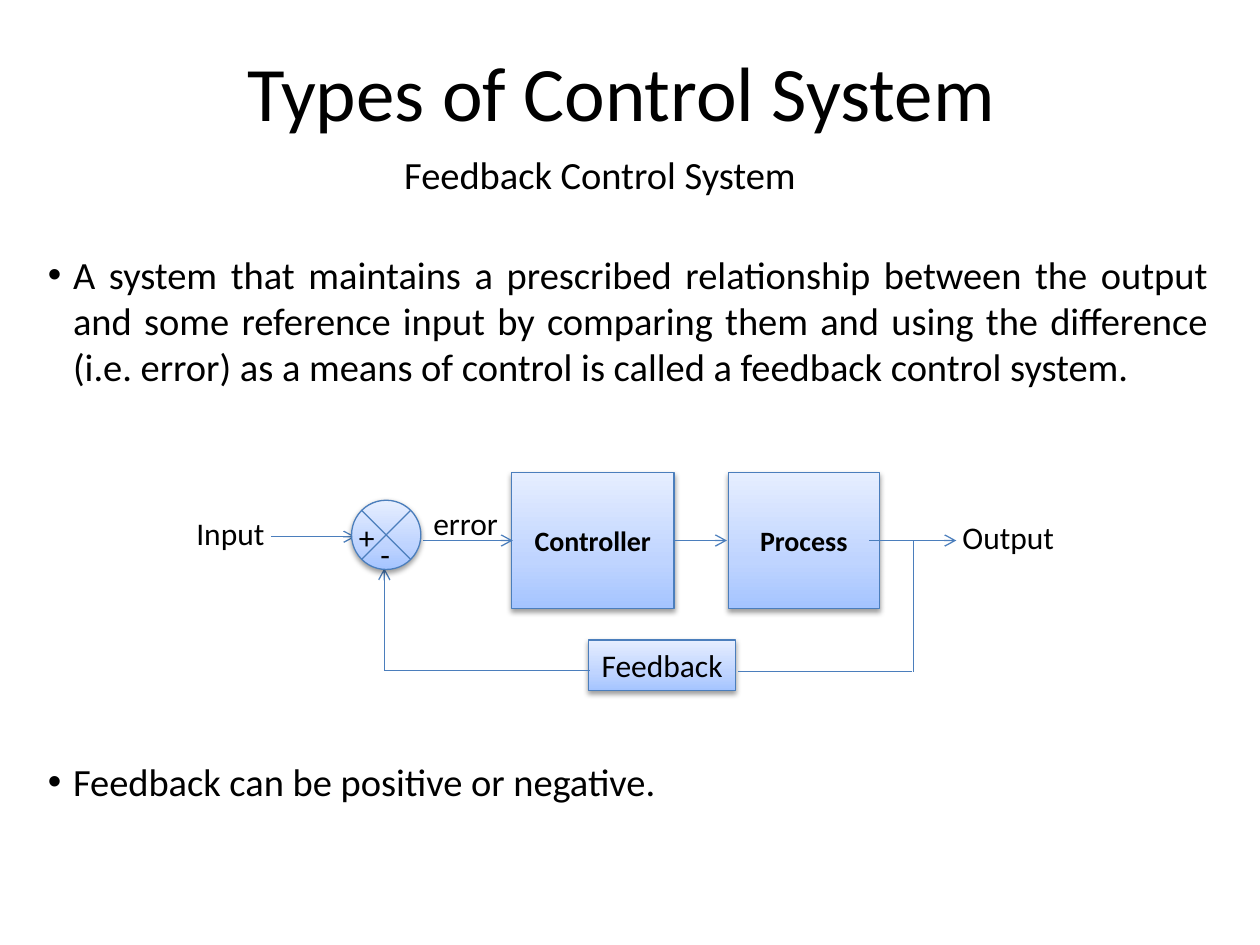
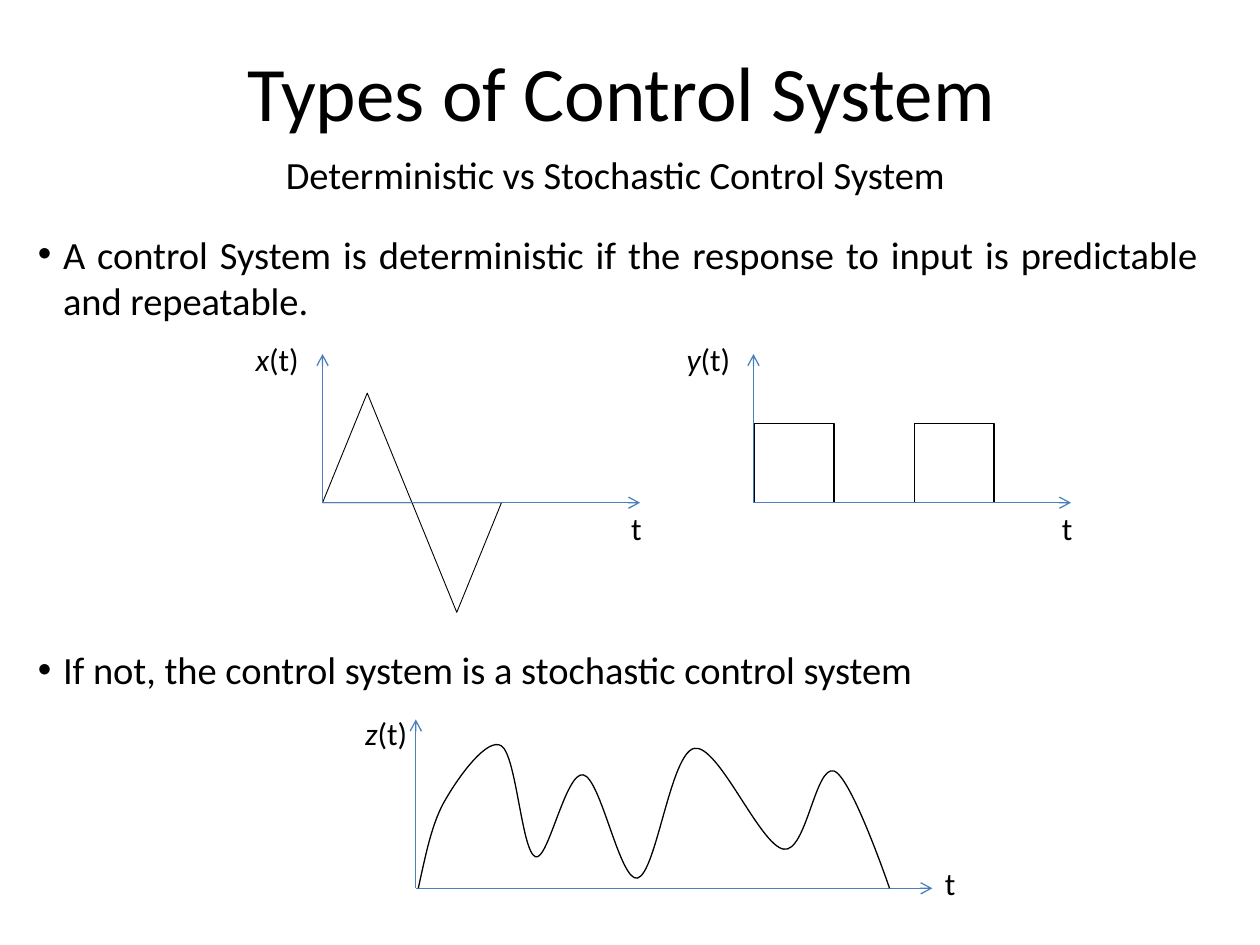
from copy import deepcopy
from dataclasses import dataclass

from lxml import etree
from pptx import Presentation, slide as sl, util as u
from pptx.dml import color
from pptx.enum import shapes as kinds, text as t
from pptx.oxml import ns
from pptx.shapes import autoshape, connector as links
from pptx.text import text as tx

COLORS = {"ink": "000000", "line": "4B7EBC", "deep": "A4C4FF", "mid": "BFD4FF", "pale": "E6EEFF"}
BLOCK_STOPS = [(0, "deep"), (0.35, "mid"), (1, "pale")]
FONT = "Calibri"
TITLE = "Types of Control System "
SHAPE = kinds.MSO_SHAPE
LABEL_HEIGHT = 0.4


@dataclass
class Area:
    left: float
    top: float
    width: float
    height: float

    def lengths(self) -> list[u.Length]:
        return [u.Inches(side) for side in (self.left, self.top, self.width, self.height)]


@dataclass
class Topic:
    heading: str
    heading_area: Area
    bullets: list[str]
    body_area: Area
    diagram_gap: float


@dataclass
class Label:
    text: str
    area: Area


@dataclass
class Block:
    text: str
    area: Area
    kind: SHAPE = SHAPE.RECTANGLE


@dataclass
class Link:
    start: tuple[float, float]
    end: tuple[float, float]
    arrow: bool = True


@dataclass
class Axes:
    variable: str
    origin: tuple[float, float]
    across: float
    up: float
    name_offset: tuple[float, float]
    time_offset: tuple[float, float]


FEEDBACK = Topic(
    "Feedback Control System",
    Area(3.11, 1.15, 3.35, 0.47),
    [
        "A system that maintains a prescribed relationship between the output and some reference "
        "input by comparing them and using the difference (i.e. error) as a means of control is "
        "called a feedback control system.",
        "Feedback can be positive or negative.",
    ],
    Area(0.28, 1.94, 9.41, 4.54),
    210.5,
)
STOCHASTIC = Topic(
    "Deterministic vs Stochastic Control System",
    Area(2.17, 1.15, 5.5, 0.47),
    [
        "A control System is deterministic if the response to input is predictable and repeatable.",
        "If not, the control system is a stochastic control system",
    ],
    Area(0.2, 1.78, 9.41, 3.8),
    184.5,
)

BLOCKS = [
    Block("Controller", Area(4.06, 3.75, 1.29, 1.08)),
    Block("Process", Area(5.78, 3.75, 1.2, 1.08)),
]
FEEDBACK_BLOCK = Block("Feedback", Area(4.67, 5.08, 1.17, 0.4))
JUNCTION = Block("", Area(2.79, 3.97, 0.55, 0.55), SHAPE.FLOWCHART_SUMMING_JUNCTION)
LINKS = [
    Link((2.15, 4.26), (2.82, 4.26)),
    Link((3.36, 4.29), (4.07, 4.29)),
    Link((5.34, 4.29), (5.77, 4.29)),
    Link((6.9, 4.29), (7.59, 4.29)),
    Link((7.25, 4.29), (7.25, 5.33), False),
    Link((7.24, 5.33), (5.86, 5.33), False),
    Link((3.05, 5.32), (4.68, 5.32), False),
    Link((3.05, 5.32), (3.05, 4.51)),
]
LABELS = [
    Label("Input", Area(1.46, 4.03, 0.82, 0.46)),
    Label("Output", Area(7.54, 4.06, 1.02, 0.46)),
    Label("-", Area(2.92, 4.2, 0.28, LABEL_HEIGHT)),
    Label("+", Area(2.75, 4.06, 0.33, LABEL_HEIGHT)),
    Label("error", Area(3.34, 3.95, 0.72, LABEL_HEIGHT)),
]

X_AXES = Axes("x", (2.56, 3.99), 2.52, 1.18, (-0.63, -1.34), (2.35, 0))
Y_AXES = Axes("y", (5.98, 3.99), 2.52, 1.18, (-0.63, -1.34), (2.35, 0))
Z_AXES = Axes("z", (3.3, 7.05), 4.1, 1.34, (-0.5, -1.43), (4.1, -0.24))

NOISE_START = (3.32, 7.05)
NOISE_CURVES = [
    ((3.38, 6.78), (3.43, 6.52), (3.54, 6.34)),
    ((3.65, 6.15), (3.87, 5.85), (3.98, 5.92)),
    ((4.1, 6), (4.14, 6.76), (4.25, 6.8)),
    ((4.35, 6.84), (4.49, 6.12), (4.63, 6.15)),
    ((4.77, 6.18), (4.92, 7), (5.06, 6.97)),
    ((5.21, 6.93), (5.32, 5.98), (5.51, 5.94)),
    ((5.7, 5.9), (6.03, 6.71), (6.22, 6.74)),
    ((6.4, 6.77), (6.47, 6.07), (6.62, 6.12)),
    ((6.76, 6.17), (7.06, 7.05), (7.06, 7.05)),
]


def rgb(name: str) -> color.RGBColor:
    return color.RGBColor.from_string(COLORS[name])


def format_runs(para: tx._Paragraph, size: float, bold: bool = False) -> None:
    for span in para.runs:
        span.font.name = FONT
        span.font.size = u.Pt(size)
        span.font.bold = bold
        span.font.color.rgb = rgb("ink")


def place(shape: autoshape.Shape, area: Area) -> None:
    shape.left, shape.top, shape.width, shape.height = area.lengths()


def add_label(page: sl.Slide, label: Label, size: float = 18) -> tx._Paragraph:
    box = page.shapes.add_textbox(*label.area.lengths())
    box.text_frame.word_wrap = False
    box.text_frame.text = label.text
    para = box.text_frame.paragraphs[0]
    format_runs(para, size)
    return para


def add_topic(deck: Presentation, topic: Topic) -> sl.Slide:
    page = deck.slides.add_slide(deck.slide_layouts[1])
    title, body = page.placeholders
    place(title, Area(0.5, 0.3, 9, 1.25))
    title.text_frame.text = TITLE
    title.text_frame.vertical_anchor = t.MSO_ANCHOR.TOP
    title.text_frame.paragraphs[0].alignment = t.PP_ALIGN.CENTER
    format_runs(title.text_frame.paragraphs[0], 44)

    place(body, topic.body_area)
    body.text_frame.auto_size = t.MSO_AUTO_SIZE.NONE
    body.text_frame.text = "\n".join(topic.bullets)
    for para, gap in zip(body.text_frame.paragraphs, (0, topic.diagram_gap)):
        para.alignment = t.PP_ALIGN.JUSTIFY
        para.space_before = u.Pt(gap)
        properties = para._p.get_or_add_pPr()
        properties.set("marL", str(u.Inches(0.2)))
        properties.set("indent", str(u.Inches(-0.2)))
        format_runs(para, 22)
    add_label(page, Label(topic.heading, topic.heading_area), 22)
    return page


def add_shadow(shape: autoshape.Shape) -> None:
    shape.shadow.inherit = False
    effects = shape.element.spPr.find(ns.qn("a:effectLst"))
    shadow = etree.SubElement(
        effects, ns.qn("a:outerShdw"), blurRad=str(u.Pt(3.1)), dist=str(u.Pt(1.6)),
        dir="5400000", rotWithShape="0",
    )
    tint = etree.SubElement(shadow, ns.qn("a:srgbClr"), val=COLORS["ink"])
    etree.SubElement(tint, ns.qn("a:alpha"), val="38000")


def add_block(page: sl.Slide, block: Block) -> autoshape.Shape:
    shape = page.shapes.add_shape(block.kind, *block.area.lengths())
    shape.fill.gradient()
    shape.fill.gradient_angle = 90
    stops = shape.element.spPr.find(ns.qn("a:gradFill")).find(ns.qn("a:gsLst"))
    stops.append(deepcopy(stops[0]))
    for stop, (position, name) in zip(shape.fill.gradient_stops, BLOCK_STOPS):
        stop.position = position
        stop.color.rgb = rgb(name)
    shape.line.color.rgb = rgb("line")
    shape.line.width = u.Pt(0.75)
    add_shadow(shape)
    if block.text:
        shape.text_frame.text = block.text
        shape.text_frame.vertical_anchor = t.MSO_ANCHOR.MIDDLE
        shape.text_frame.paragraphs[0].alignment = t.PP_ALIGN.CENTER
        format_runs(shape.text_frame.paragraphs[0], 16, bold=True)
    return shape


def add_link(page: sl.Slide, link: Link) -> links.Connector:
    ends = [u.Inches(value) for value in (*link.start, *link.end)]
    line = page.shapes.add_connector(kinds.MSO_CONNECTOR.STRAIGHT, *ends)
    line.line.color.rgb = rgb("line")
    line.line.width = u.Pt(0.75)
    properties = line.element.spPr
    if link.arrow:
        etree.SubElement(properties.find(ns.qn("a:ln")), ns.qn("a:tailEnd"), type="arrow")
    etree.SubElement(properties, ns.qn("a:effectLst"))
    return line


def outline(shape: autoshape.Shape, weight: float) -> None:
    shape.fill.background()
    shape.line.color.rgb = rgb("ink")
    shape.line.width = u.Pt(weight)
    shape.shadow.inherit = False


def add_axes(page: sl.Slide, axes: Axes) -> None:
    left, base = axes.origin
    add_link(page, Link(axes.origin, (left, base - axes.up)))
    add_link(page, Link(axes.origin, (left + axes.across, base)))
    name_left, name_top = left + axes.name_offset[0], base + axes.name_offset[1]
    para = add_label(page, Label(axes.variable, Area(name_left, name_top, 0.55, LABEL_HEIGHT)))
    para.add_run().text = "(t)"
    format_runs(para, 18)
    para.runs[0].font.italic = True
    time_left, time_top = left + axes.time_offset[0], base + axes.time_offset[1]
    add_label(page, Label("t", Area(time_left, time_top, 0.29, LABEL_HEIGHT)))


def add_triangle_wave(page: sl.Slide) -> None:
    left, base = X_AXES.origin
    width, height = 0.71, 0.87
    for half in range(2):
        area = Area(left + half * width, base - (1 - half) * height, width, height)
        triangle = page.shapes.add_shape(SHAPE.ISOSCELES_TRIANGLE, *area.lengths())
        triangle.rotation = 180 * half
        outline(triangle, 0.5)


def add_square_wave(page: sl.Slide) -> None:
    side = 0.63
    for pulse in range(2):
        area = Area(5.99 + pulse * 1.27, Y_AXES.origin[1] - side, side, side)
        outline(page.shapes.add_shape(SHAPE.RECTANGLE, *area.lengths()), 0.75)


def add_noise(page: sl.Slide) -> None:
    builder = page.shapes.build_freeform(*(u.Inches(value) for value in NOISE_START))
    builder.add_line_segments(
        [(u.Inches(x), u.Inches(y)) for curve in NOISE_CURVES for x, y in curve], close=False
    )
    noise = builder.convert_to_shape()
    segments = list(noise.element.spPr.iter(ns.qn("a:lnTo")))
    route = segments[0].getparent()
    for first in range(0, len(segments), 3):
        curve = etree.SubElement(route, ns.qn("a:cubicBezTo"))
        for segment in segments[first:first + 3]:
            curve.append(segment[0])
            route.remove(segment)
    outline(noise, 0.75)


def build_feedback(deck: Presentation) -> None:
    page = add_topic(deck, FEEDBACK)
    for block in BLOCKS:
        add_block(page, block)
    feedback = add_block(page, FEEDBACK_BLOCK)
    feedback.text_frame.word_wrap = False
    format_runs(feedback.text_frame.paragraphs[0], 18)
    for link in LINKS:
        add_link(page, link)
    add_block(page, JUNCTION)
    for label in LABELS:
        add_label(page, label)


def build_stochastic(deck: Presentation) -> None:
    page = add_topic(deck, STOCHASTIC)
    add_triangle_wave(page)
    add_square_wave(page)
    for axes in (X_AXES, Y_AXES, Z_AXES):
        add_axes(page, axes)
    add_noise(page)


def main() -> None:
    deck = Presentation()
    deck.slide_width, deck.slide_height = u.Inches(10), u.Inches(7.5)
    build_feedback(deck)
    build_stochastic(deck)
    deck.save("out.pptx")


if __name__ == "__main__":
    main()
